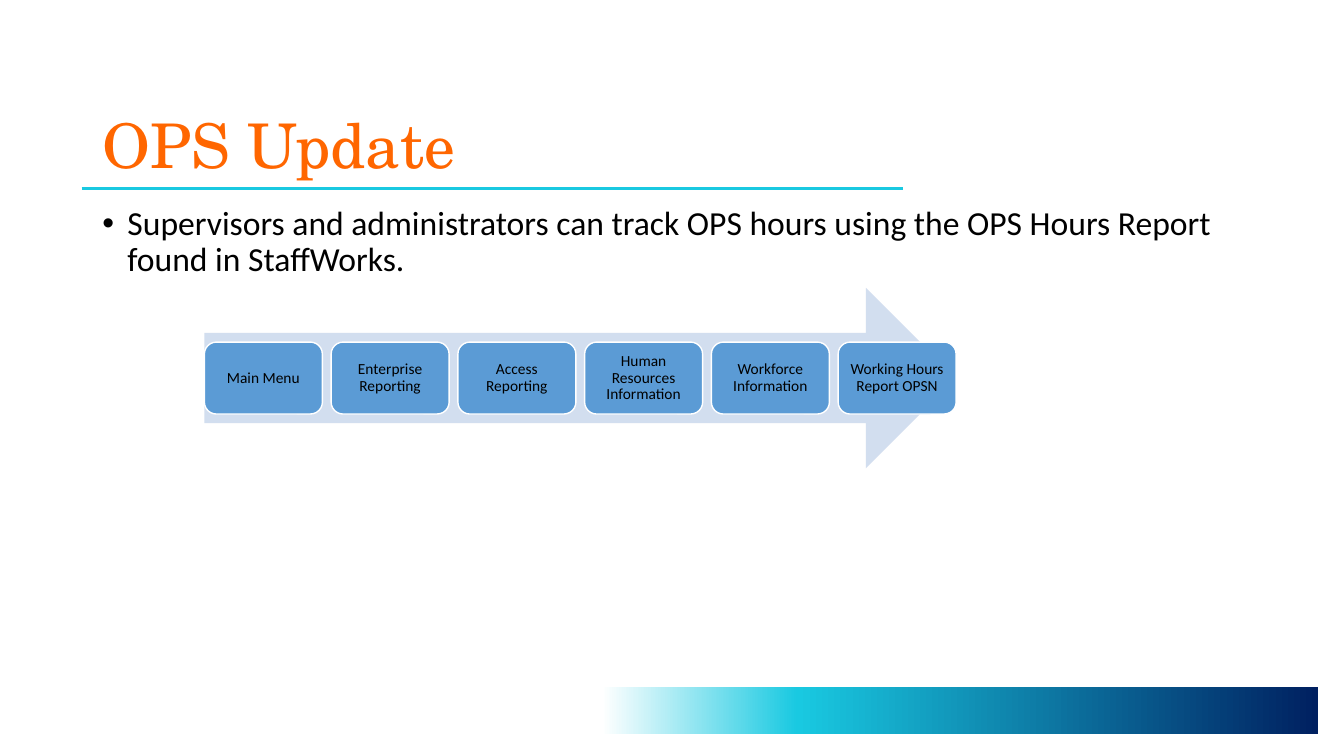
from lxml import etree
from pptx import Presentation
from pptx.dml.color import RGBColor
from pptx.enum import shapes, text
from pptx.oxml import ns
from pptx.util import Pt

TITLE = "OPS Update"
BULLET = ("Supervisors and administrators can track OPS hours using the "
          "OPS Hours Report found in StaffWorks.")
STEPS = ["Main Menu", "Enterprise Reporting", "Access Reporting",
         "Human Resources Information", "Workforce Information",
         "Working Hours Report OPSN"]
COLORS = {"title": "FF6600", "text": "000000", "rule": "19C9E1",
          "arrow": "D2DEEF", "step": "5B9BD5", "white": "FFFFFF",
          "navy": "002060"}
BANNER_STOPS = [(0, "navy"), (72, "rule"), (99, "white")]

# Geometry in points
MARGIN, TEXT_WIDTH = 66, 828
ARROW = (146, 205.6, 537, 128.9)
STEP_WIDTH, STEP_HEIGHT = 84.3, 51.4
BANNER = (424.8, 490.5, 517, 33.8)


def rgb(name):
    return RGBColor.from_string(COLORS[name])


def points(*lengths):
    return [Pt(length) for length in lengths]


def set_font(paragraph, name, size, color):
    paragraph.font.name, paragraph.font.size = name, Pt(size)
    paragraph.font.color.rgb = rgb(color)


def add_block(slide, kind, box, fill=None):
    block = slide.shapes.add_shape(kind, *points(*box))
    block.shadow.inherit = False
    block.line.fill.background()
    if fill:
        block.fill.solid()
        block.fill.fore_color.rgb = rgb(fill)
    return block


def add_title(slide):
    title = slide.shapes.title
    title.left, title.top, title.width, title.height = points(
        MARGIN, 28.8, TEXT_WIDTH, 104.4)
    title.text_frame.text = TITLE
    title.text_frame.vertical_anchor = text.MSO_ANCHOR.BOTTOM
    heading = title.text_frame.paragraphs[0]
    heading.alignment, heading.line_spacing = text.PP_ALIGN.LEFT, 0.9
    set_font(heading, "TeX Gyre Schola", 44, "title")

    rule = slide.shapes.add_connector(
        shapes.MSO_CONNECTOR.STRAIGHT, *points(58.3, 134.6, 645.1, 134.6))
    rule.line.color.rgb, rule.line.width = rgb("rule"), Pt(2)
    etree.SubElement(rule._element.spPr, ns.qn("a:effectLst"))


def add_body(slide):
    body = slide.shapes.add_textbox(*points(MARGIN, 144, TEXT_WIDTH, 342.7))
    body.text_frame.word_wrap = True
    bullet = body.text_frame.paragraphs[0]
    bullet.text, bullet.line_spacing = BULLET, 0.9
    properties = bullet._p.get_or_add_pPr()
    properties.set("marL", str(Pt(18)))
    properties.set("indent", str(-Pt(18)))
    etree.SubElement(properties, ns.qn("a:buFont"), typeface="Arial")
    etree.SubElement(properties, ns.qn("a:buChar"), char="•")
    set_font(bullet, "Calibri", 24, "text")


def add_process(slide):
    left, top, width, height = ARROW
    add_block(slide, shapes.MSO_SHAPE.RIGHT_ARROW, ARROW, "arrow")
    pitch = (width - STEP_WIDTH) / (len(STEPS) - 1)
    step_top = top + (height - STEP_HEIGHT) / 2
    for i, label in enumerate(STEPS):
        step = add_block(slide, shapes.MSO_SHAPE.ROUNDED_RECTANGLE,
                         (left + i * pitch, step_top, STEP_WIDTH, STEP_HEIGHT),
                         "step")
        step.line.color.rgb, step.line.width = rgb("white"), Pt(1)
        frame = step.text_frame
        frame.margin_left = frame.margin_right = Pt(3.3)
        frame.margin_top = frame.margin_bottom = Pt(3.3)
        frame.word_wrap = True
        frame.vertical_anchor = text.MSO_ANCHOR.MIDDLE
        caption = frame.paragraphs[0]
        caption.text, caption.line_spacing = label, 0.9
        caption.alignment = text.PP_ALIGN.CENTER
        set_font(caption, "Calibri", 11, "text")


def add_banner(slide):
    banner = add_block(slide, shapes.MSO_SHAPE.RECTANGLE, BANNER)
    # Three-stop gradient running from right to left
    banner.fill.gradient()
    gradient = banner._element.spPr.find(ns.qn("a:gradFill"))
    for part in list(gradient):
        gradient.remove(part)
    stops = etree.SubElement(gradient, ns.qn("a:gsLst"))
    for percent, color in BANNER_STOPS:
        stop = etree.SubElement(stops, ns.qn("a:gs"), pos=str(percent * 1000))
        etree.SubElement(stop, ns.qn("a:srgbClr"), val=COLORS[color])
    etree.SubElement(gradient, ns.qn("a:lin"), ang=str(180 * 60000), scaled="0")


def main():
    deck = Presentation()
    deck.slide_width, deck.slide_height = points(960, 540)
    slide = deck.slides.add_slide(deck.slide_layouts[5])
    add_title(slide)
    add_body(slide)
    add_banner(slide)
    add_process(slide)
    deck.save("out.pptx")


if __name__ == "__main__":
    main()
